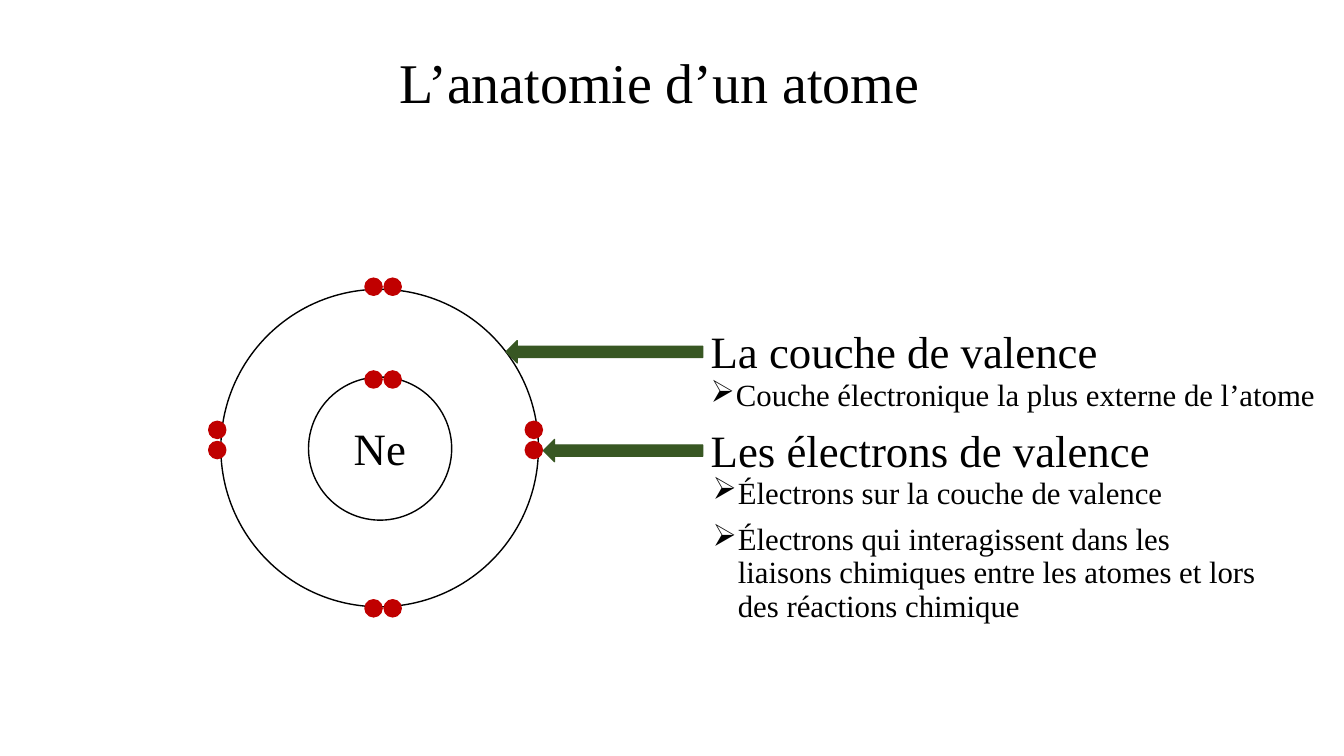
"""Build the slide on the anatomy of an atom."""
from dataclasses import dataclass
from itertools import product

import lxml.etree
import pptx
import pptx.dml.color
import pptx.enum.shapes
import pptx.enum.text
import pptx.oxml.ns
import pptx.util

EMU_PER_PX = 9144
FONT = "Times New Roman"
BLACK, RED, GREEN = "000000", "C00000", "385723"
ELECTRON_SIZE = 17
BULLET_INDENT = 25
OVAL = pptx.enum.shapes.MSO_SHAPE.OVAL
LEFT_ARROW = pptx.enum.shapes.MSO_SHAPE.LEFT_ARROW


@dataclass(frozen=True)
class Area:
    left: int
    top: int
    width: int
    height: int


@dataclass(frozen=True)
class Label:
    text: str
    area: Area


@dataclass(frozen=True)
class Bullet:
    text: str
    area: Area
    line_spacing: float = 0.9


TITLE = Label("L’anatomie d’un atome", Area(79, 12, 1150, 145))
SHELLS = [Area(306, 374, 142, 142), Area(219, 287, 315, 315)]
ARROWS = [Area(502, 338, 195, 22), Area(539, 436, 158, 22)]
ELECTRONS = [*product((362, 381), (276, 368, 595)), *product((207, 521), (418, 438))]
LABELS = [
    Label("Ne", Area(341, 412, 73, 64)),
    Label("La couche de valence", Area(695, 316, 407, 64)),
    Label("Les électrons de valence", Area(695, 414, 461, 64)),
]
BULLETS = [
    Bullet("Couche électronique la plus externe de l’atome", Area(695, 372, 639, 45)),
    Bullet("Électrons sur la couche de valence", Area(697, 472, 505, 43), 0.8),
    Bullet(
        "Électrons qui interagissent dans les liaisons chimiques "
        "entre les atomes et lors des réactions chimique",
        Area(697, 515, 570, 125),
    ),
]


def px(length: int) -> pptx.util.Emu:
    return pptx.util.Emu(length * EMU_PER_PX)


def color(value: str) -> pptx.dml.color.RGBColor:
    return pptx.dml.color.RGBColor.from_string(value)


def bounds(area: Area) -> tuple:
    return px(area.left), px(area.top), px(area.width), px(area.height)


def format_text(para, size: int) -> None:
    for span in para.runs:
        span.font.name = FONT
        span.font.size = pptx.util.Pt(size)
        span.font.color.rgb = color(BLACK)


def draw_title(slide, label: Label) -> None:
    title = slide.shapes.title
    title.left, title.top, title.width, title.height = bounds(label.area)
    title.text_frame.text = label.text
    title.text_frame.vertical_anchor = pptx.enum.text.MSO_ANCHOR.MIDDLE
    para = title.text_frame.paragraphs[0]
    para.alignment = pptx.enum.text.PP_ALIGN.CENTER
    para.line_spacing = 0.9
    format_text(para, 40)


def draw_shape(slide, kind, area: Area, line: str, fill: str | None = None) -> None:
    shape = slide.shapes.add_shape(kind, *bounds(area))
    shape.shadow.inherit = False
    shape.line.color.rgb = color(line)
    shape.line.width = pptx.util.Pt(1)
    if fill is None:
        shape.fill.background()
    else:
        shape.fill.solid()
        shape.fill.fore_color.rgb = color(fill)


def draw_label(slide, label: Label) -> None:
    box = slide.shapes.add_textbox(*bounds(label.area))
    frame = box.text_frame
    frame.text = label.text
    frame.word_wrap = False
    frame.auto_size = pptx.enum.text.MSO_AUTO_SIZE.SHAPE_TO_FIT_TEXT
    format_text(frame.paragraphs[0], 32)


def draw_bullet(slide, bullet: Bullet) -> None:
    box = slide.shapes.add_textbox(*bounds(bullet.area))
    frame = box.text_frame
    frame.text = bullet.text
    frame.word_wrap = True
    para = frame.paragraphs[0]
    para.line_spacing = bullet.line_spacing
    properties = para._p.get_or_add_pPr()
    properties.set("marL", str(px(BULLET_INDENT)))
    properties.set("indent", str(-px(BULLET_INDENT)))
    mark = lxml.etree.SubElement(properties, pptx.oxml.ns.qn("a:buChar"))
    mark.set("char", "➢")
    format_text(para, 22)


def main() -> None:
    deck = pptx.Presentation()
    deck.slide_width, deck.slide_height = px(1333), px(750)
    page = deck.slides.add_slide(deck.slide_layouts.get_by_name("Title Only"))
    draw_title(page, TITLE)
    for shell in SHELLS:
        draw_shape(page, OVAL, shell, BLACK)
    for left, top in ELECTRONS:
        draw_shape(page, OVAL, Area(left, top, ELECTRON_SIZE, ELECTRON_SIZE), RED, RED)
    for arrow in ARROWS:
        draw_shape(page, LEFT_ARROW, arrow, GREEN, GREEN)
    for label in LABELS:
        draw_label(page, label)
    for bullet in BULLETS:
        draw_bullet(page, bullet)
    deck.save("out.pptx")


if __name__ == "__main__":
    main()
